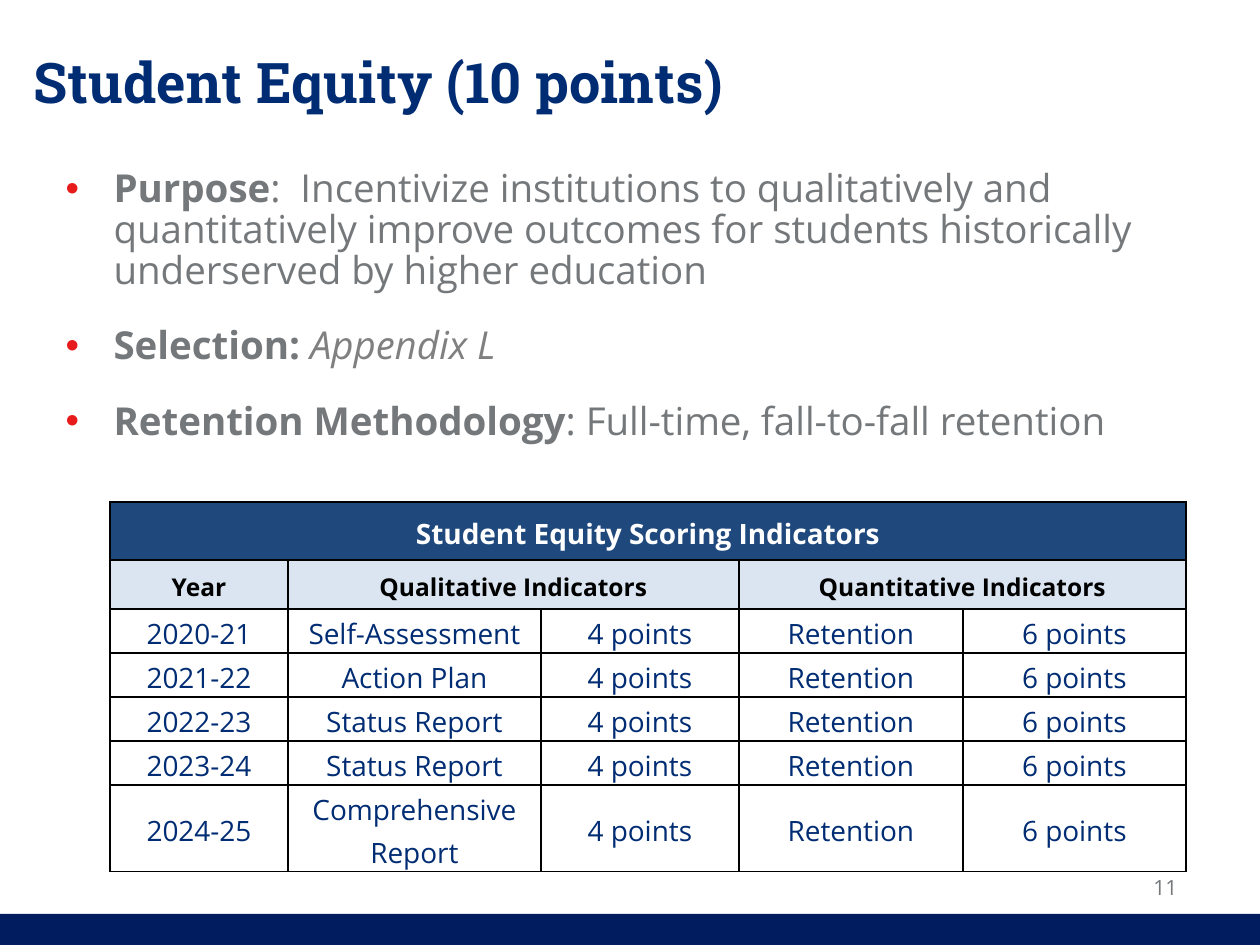
from lxml import etree
from pptx import Presentation
from pptx.dml.color import RGBColor
from pptx.enum.shapes import MSO_SHAPE
from pptx.enum.text import MSO_ANCHOR, MSO_AUTO_SIZE, PP_ALIGN
from pptx.oxml.ns import qn
from pptx.util import Pt

RECTANGLE = MSO_SHAPE.RECTANGLE
TOP, MIDDLE = MSO_ANCHOR.TOP, MSO_ANCHOR.MIDDLE
LEFT, CENTER = PP_ALIGN.LEFT, PP_ALIGN.CENTER
NO_FIT = MSO_AUTO_SIZE.NONE

NAVY = RGBColor(0x00, 0x2C, 0x73)
BAR_NAVY = RGBColor(0x01, 0x1D, 0x5F)
HEADER_BLUE = RGBColor(0x1F, 0x49, 0x7D)
PALE_BLUE = RGBColor(0xDB, 0xE5, 0xF1)
GRAY = RGBColor(0x75, 0x78, 0x7B)
MID_GRAY = RGBColor(0x80, 0x80, 0x80)
RED = RGBColor(0xE7, 0x1B, 0x1B)
BLACK = RGBColor(0x00, 0x00, 0x00)
WHITE = RGBColor(0xFF, 0xFF, 0xFF)

BODY_FONT = "Open Sans"
TITLE_FONT = "Roboto Slab"

BULLETS = [
    [("Purpose", True, False, GRAY),
     (":  Incentivize institutions to qualitatively and quantitatively improve "
      "outcomes for students historically underserved by higher education",
      False, False, GRAY)],
    [("Selection: ", True, False, GRAY), ("Appendix L", False, True, MID_GRAY)],
    [("Retention Methodology", True, False, GRAY),
     (": Full-time, fall-to-fall retention", False, False, GRAY)],
]
ASSESSMENTS = [
    ("2020-21", "Self-Assessment"),
    ("2021-22", "Action Plan"),
    ("2022-23", "Status Report"),
    ("2023-24", "Status Report"),
    ("2024-25", "Comprehensive Report"),
]
COLUMN_WIDTHS = [178, 253, 198, 224, 223]
ROW_HEIGHTS = [58, 49, 44, 44, 44, 44, 87]


def px(length):
    """Turn whole pixels into EMU at 126 pixels to the inch."""
    return round(length * 914400 / 126)


def place(shape, left, top, width, height):
    """Move and size a shape in pixels."""
    shape.left, shape.top = px(left), px(top)
    shape.width, shape.height = px(width), px(height)


def add_span(para, text, size, color, bold=False, italic=False, font=BODY_FONT):
    """Add one formatted run to a paragraph."""
    span = para.add_run()
    span.text = text
    span.font.name = font
    span.font.size = Pt(size)
    span.font.bold = bold
    span.font.italic = italic
    span.font.color.rgb = color


def set_bullet(para, indent):
    """Give a paragraph a red bullet and a hanging indent."""
    properties = para._p.get_or_add_pPr()
    properties.set("marL", str(px(indent)))
    properties.set("indent", str(-px(indent)))
    color = etree.SubElement(properties, qn("a:buClr"))
    etree.SubElement(color, qn("a:srgbClr"), val=str(RED))
    etree.SubElement(properties, qn("a:buFont"), typeface="Arial")
    etree.SubElement(properties, qn("a:buChar"), char="•")


def fill_title(title):
    """Write the slide title in its placeholder."""
    place(title, 21, 2, 1134, 158)
    frame = title.text_frame
    frame.auto_size = NO_FIT
    frame.vertical_anchor = MIDDLE
    para = frame.paragraphs[0]
    para.alignment = LEFT
    add_span(para, "Student Equity (10 points)", 32, NAVY, bold=True, font=TITLE_FONT)


def fill_body(body):
    """Write the bulleted list in the body placeholder."""
    place(body, 53, 164, 1134, 320)
    frame = body.text_frame
    frame.auto_size = NO_FIT
    frame.vertical_anchor = TOP
    for index, spans in enumerate(BULLETS):
        para = frame.add_paragraph() if index else frame.paragraphs[0]
        set_bullet(para, 48)
        para.line_spacing = 0.88
        para.space_before = Pt(20 if index else 0)
        for text, bold, italic, color in spans:
            add_span(para, text, 22, color, bold, italic)


def set_borders(cell):
    """Draw a thin black line on each side of a cell."""
    properties = cell._tc.get_or_add_tcPr()
    for position, side in enumerate(("a:lnL", "a:lnR", "a:lnT", "a:lnB")):
        line = etree.Element(qn(side), w=str(Pt(1)))
        fill = etree.SubElement(line, qn("a:solidFill"))
        etree.SubElement(fill, qn("a:srgbClr"), val=str(BLACK))
        properties.insert(position, line)


def fill_cell(cell, text, size, color, bold=False, fill=None):
    """Write centred text in a table cell."""
    cell.vertical_anchor = MIDDLE
    cell.margin_left = cell.margin_right = px(9)
    cell.margin_top = cell.margin_bottom = 0
    if fill is None:
        cell.fill.background()
    else:
        cell.fill.solid()
        cell.fill.fore_color.rgb = fill
    para = cell.text_frame.paragraphs[0]
    para.alignment = CENTER
    para.line_spacing = 1.15
    add_span(para, text, size, color, bold)


def add_scoring_table(slide):
    """Add the table of scoring indicators by year."""
    frame = slide.shapes.add_table(
        len(ROW_HEIGHTS), len(COLUMN_WIDTHS), px(110), px(502),
        px(sum(COLUMN_WIDTHS)), px(sum(ROW_HEIGHTS)))
    table = frame.table
    table.first_row = table.horz_banding = False
    for column, width in zip(table.columns, COLUMN_WIDTHS):
        column.width = px(width)
    for row, height in zip(table.rows, ROW_HEIGHTS):
        row.height = px(height)
    for cell in table.iter_cells():
        set_borders(cell)
    for row, first, last in ((0, 0, 4), (1, 1, 2), (1, 3, 4)):
        table.cell(row, first).merge(table.cell(row, last))
    fill_cell(table.cell(0, 0), "Student Equity Scoring Indicators", 16, WHITE,
              True, HEADER_BLUE)
    for column, text in ((0, "Year"), (1, "Qualitative Indicators"),
                         (3, "Quantitative Indicators")):
        fill_cell(table.cell(1, column), text, 14, BLACK, True, PALE_BLUE)
    for row, (year, assessment) in enumerate(ASSESSMENTS, start=2):
        values = (year, assessment, "4 points", "Retention", "6 points")
        for column, text in enumerate(values):
            fill_cell(table.cell(row, column), text, 16, NAVY)


def add_footer_bar(slide):
    """Add the navy bar along the bottom edge."""
    bar = slide.shapes.add_shape(RECTANGLE, 0, px(914), px(1260), px(31))
    bar.shadow.inherit = False
    bar.fill.solid()
    bar.fill.fore_color.rgb = BAR_NAVY
    bar.line.fill.background()


def add_page_number(slide):
    """Add the page number above the footer bar."""
    box = slide.shapes.add_textbox(px(1134), px(861), px(63), px(53))
    frame = box.text_frame
    frame.word_wrap = True
    frame.vertical_anchor = MIDDLE
    para = frame.paragraphs[0]
    para.alignment = CENTER
    add_span(para, "11", 12, GRAY)


def main():
    """Build the slide and save it."""
    deck = Presentation()
    deck.slide_width, deck.slide_height = px(1260), px(945)
    page = deck.slides.add_slide(deck.slide_layouts[1])
    add_page_number(page)
    add_footer_bar(page)
    fill_title(page.shapes.title)
    fill_body(page.placeholders[1])
    add_scoring_table(page)
    deck.save("out.pptx")


if __name__ == "__main__":
    main()
